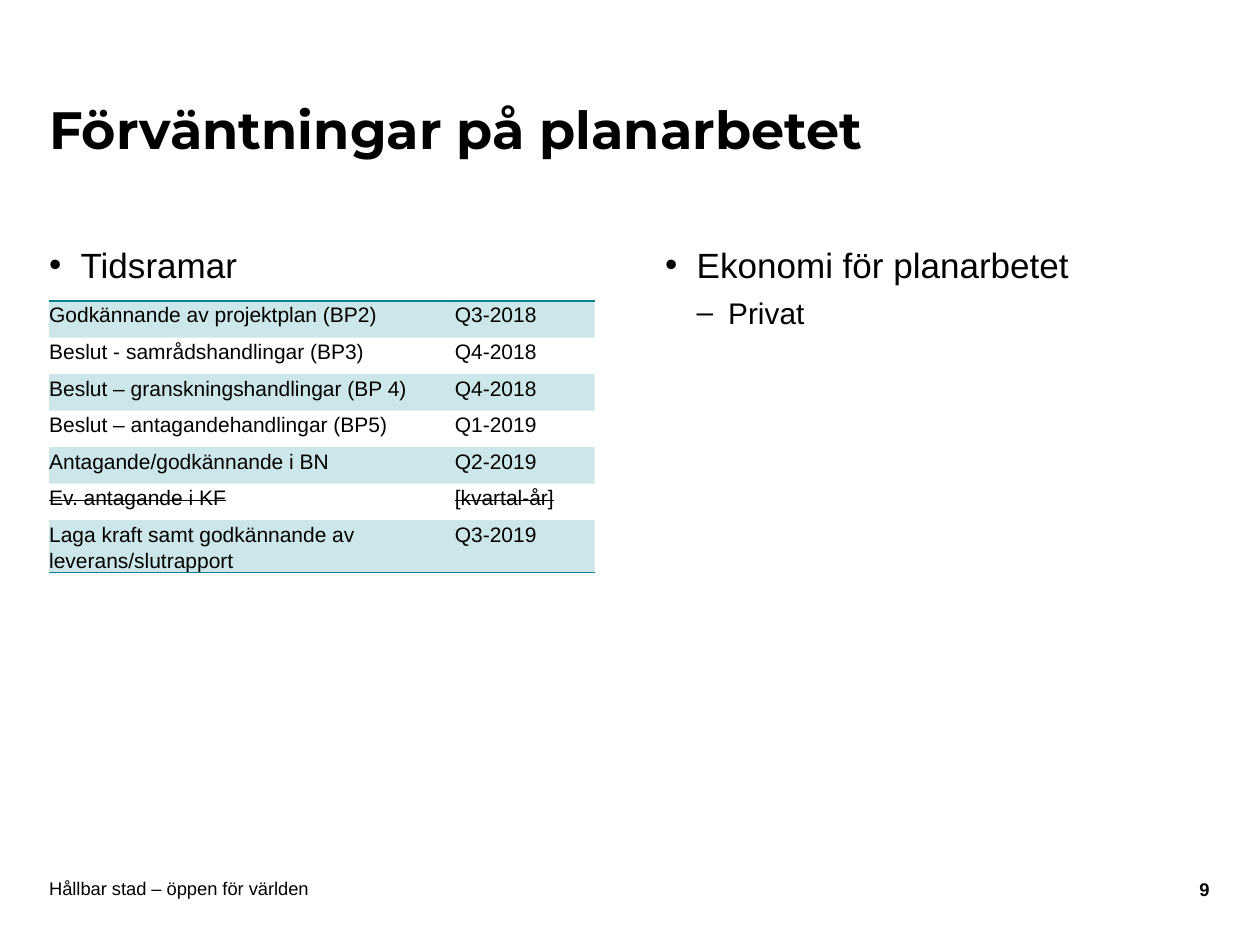
from lxml import etree
from pptx import Presentation
from pptx.dml.color import RGBColor
from pptx.enum import text
from pptx.oxml import ns
from pptx.util import Inches, Pt

# Content
TITLE = "Förväntningar på planarbetet"
LEFT_BULLETS = [("Tidsramar", 0)]
RIGHT_BULLETS = [("Ekonomi för planarbetet", 0), ("Privat", 1)]
MILESTONES = [
    ("Godkännande av projektplan (BP2)", "Q3-2018"),
    ("Beslut - samrådshandlingar (BP3)", "Q4-2018"),
    ("Beslut – granskningshandlingar (BP 4)", "Q4-2018"),
    ("Beslut – antagandehandlingar (BP5)", "Q1-2019"),
    ("Antagande/godkännande i BN", "Q2-2019"),
    ("Ev. antagande i KF", "[kvartal-år]"),
    ("Laga kraft samt godkännande av leverans/slutrapport", "Q3-2019"),
]
STRUCK_ROW = 5
FOOTER = "Hållbar stad – öppen för världen"
PAGE = "9"

# Style
COLORS = {"text": "000000", "teal": "008391"}
LEVELS = [("•", 20), ("–", 17)]
MARGIN, COL_W, RIGHT_X = 0.39, 4.33, 5.28
COL_WIDTHS = (3.22, 1.11)
ROW_H = 0.29
NO_STYLE = "{2D5ABB26-0587-4C30-8999-92F81FD0307C}"


def sub(parent, tag, **attrs):
    return etree.SubElement(parent, ns.qn(tag), attrs)


def add_run(p, words, size, bold=False, font="Arial"):
    r = p.add_run()
    r.text = words
    r.font.size, r.font.bold, r.font.name = Pt(size), bold, font
    r.font.color.rgb = RGBColor.from_string(COLORS["text"])
    return r


def set_frame(tf, anchor, inset_y=0):
    tf.word_wrap = True
    tf.auto_size = text.MSO_AUTO_SIZE.NONE
    tf.vertical_anchor = anchor
    tf.margin_left = tf.margin_right = 0
    tf.margin_top = tf.margin_bottom = Inches(inset_y)


def add_box(s, x, y, w, h, anchor=text.MSO_ANCHOR.TOP):
    sp = s.shapes.add_textbox(Inches(x), Inches(y), Inches(w), Inches(h))
    set_frame(sp.text_frame, anchor)
    return sp.text_frame


def add_bullets(s, x, items):
    tf = add_box(s, x, 1.9, COL_W, 4.59)
    for i, (words, level) in enumerate(items):
        p = tf.add_paragraph() if i else tf.paragraphs[0]
        char, size = LEVELS[level]
        p.level = level
        pPr = p._p.get_or_add_pPr()
        pPr.set("marL", str(Inches(0.25 * (level + 1))))
        pPr.set("indent", str(Inches(-0.25)))
        sub(pPr, "a:buFont", typeface="Arial")
        sub(pPr, "a:buChar", char=char)
        p.line_spacing, p.space_after = 1.1, Pt(3)
        add_run(p, words, size)


def add_border(cell, tag):
    ln = etree.Element(ns.qn(tag), {"w": str(Pt(1))})
    sub(sub(ln, "a:solidFill"), "a:srgbClr", val=COLORS["teal"])
    cell._tc.get_or_add_tcPr().insert(0, ln)


def fill_cell(cell, shaded):
    if not shaded:
        cell.fill.background()
        return
    cell.fill.solid()
    cell.fill.fore_color.rgb = RGBColor.from_string(COLORS["teal"])
    color = cell._tc.tcPr.find(".//" + ns.qn("a:srgbClr"))
    sub(color, "a:alpha", val="20000")


def add_milestones(s):
    n = len(MILESTONES)
    frame = s.shapes.add_table(n, 2, Inches(MARGIN), Inches(2.39),
                               Inches(COL_W), Inches(ROW_H * n))
    table = frame.table
    table.first_row = table.horz_banding = False
    table._tbl.tblPr.find(ns.qn("a:tableStyleId")).text = NO_STYLE
    for col, width in zip(table.columns, COL_WIDTHS):
        col.width = Inches(width)
    for i, row in enumerate(MILESTONES):
        table.rows[i].height = Inches(ROW_H)
        for j, words in enumerate(row):
            cell = table.cell(i, j)
            cell.margin_left = cell.margin_right = 0
            cell.margin_top = cell.margin_bottom = 0
            p = cell.text_frame.paragraphs[0]
            p.line_spacing, p.space_after = Pt(15), Pt(6)
            r = add_run(p, words, 12)
            if i == STRUCK_ROW:
                r.font._element.set("strike", "sngStrike")
            fill_cell(cell, i % 2 == 0)
            if i == 0:
                add_border(cell, "a:lnT")
            if i == n - 1:
                add_border(cell, "a:lnB")


def main():
    prs = Presentation()
    prs.slide_width, prs.slide_height = Inches(10), Inches(7.5)
    s = prs.slides.add_slide(prs.slide_layouts[5])
    middle = text.MSO_ANCHOR.MIDDLE

    # Title
    title = s.shapes.title
    title.left, title.top = Inches(MARGIN), Inches(0.42)
    title.width, title.height = Inches(7.52), Inches(1.26)
    set_frame(title.text_frame, middle, 0.05)
    p = title.text_frame.paragraphs[0]
    p.alignment, p.line_spacing = text.PP_ALIGN.LEFT, 0.9
    add_run(p, TITLE, 30, True, "Montserrat")

    # Two columns and the timetable
    add_bullets(s, MARGIN, LEFT_BULLETS)
    add_bullets(s, RIGHT_X, RIGHT_BULLETS)
    add_milestones(s)

    # Footer and page number
    add_run(add_box(s, MARGIN, 6.97, 7.09, 0.16, middle).paragraphs[0], FOOTER, 10.5)
    p = add_box(s, 9.12, 6.98, 0.48, 0.16, middle).paragraphs[0]
    p.alignment = text.PP_ALIGN.RIGHT
    add_run(p, PAGE, 10.5, True)

    prs.save("out.pptx")


if __name__ == "__main__":
    main()
